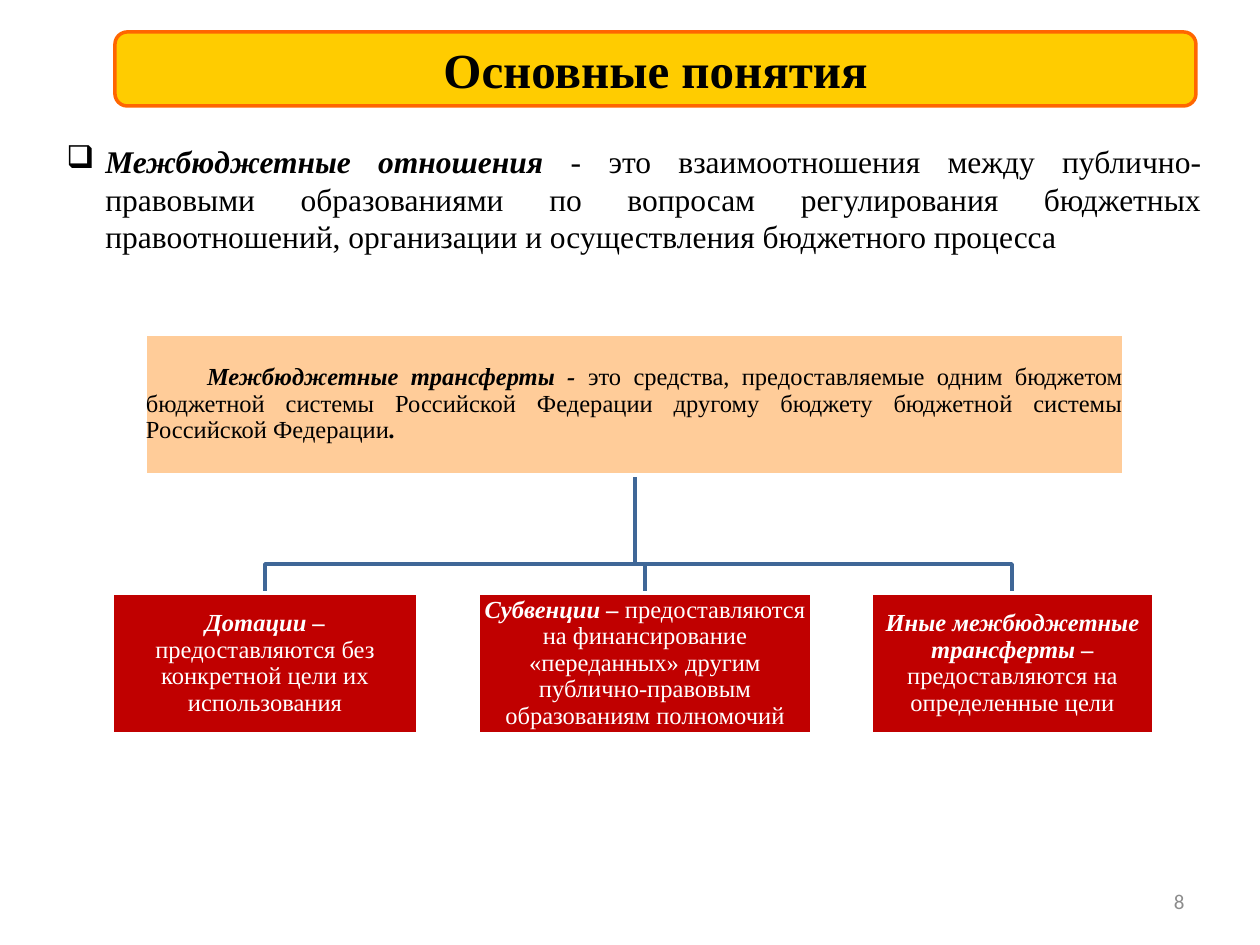
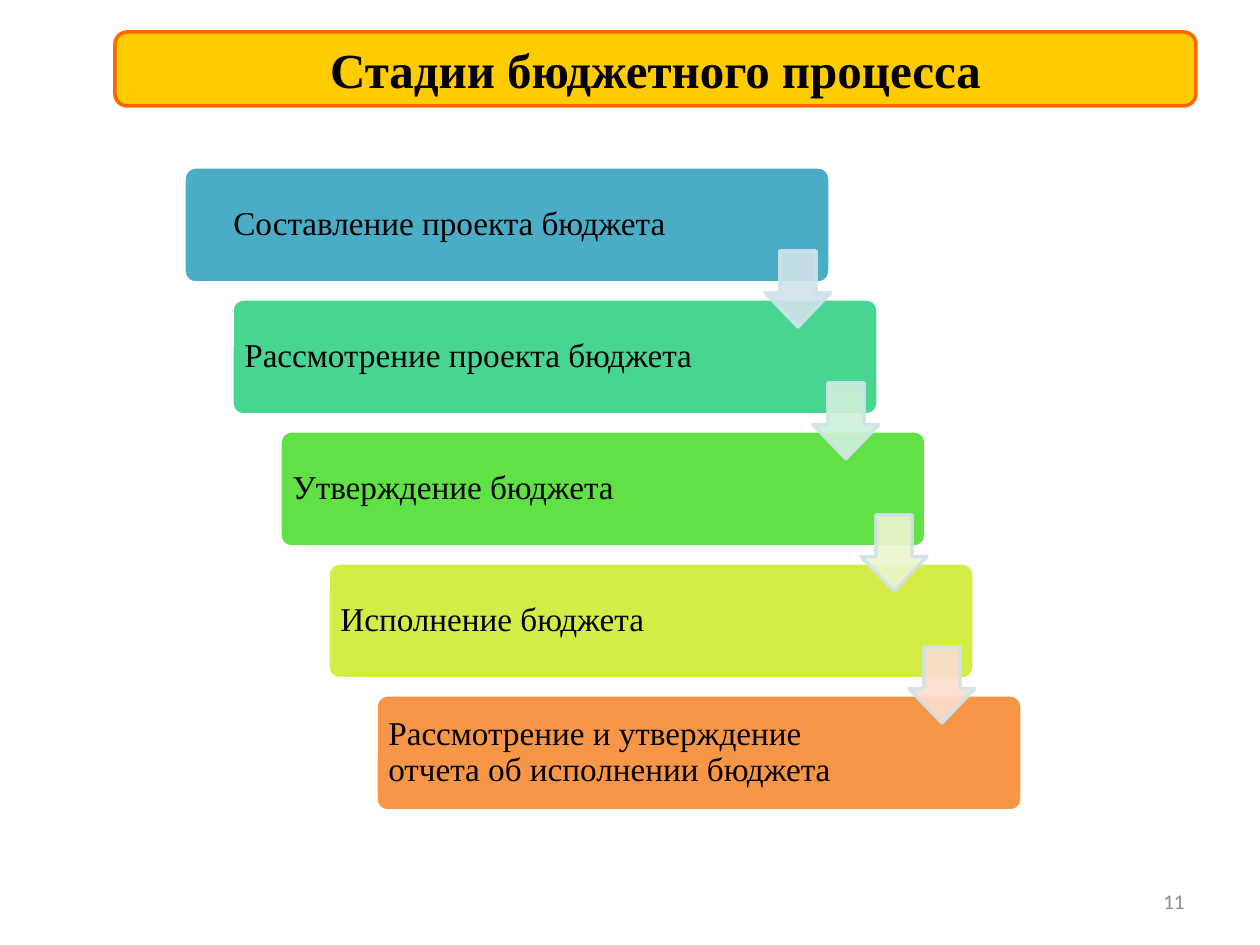
from lxml.etree import SubElement
from pptx import Presentation
from pptx.dml.color import RGBColor
from pptx.enum.shapes import MSO_SHAPE as SHAPE
from pptx.enum.text import MSO_ANCHOR as ANCHOR, PP_ALIGN as ALIGN
from pptx.oxml.ns import qn
from pptx.util import Inches, Pt

# Shared scale, fonts and colours
PX = Inches(1) / 126
SERIF, SANS = "Times New Roman", "Calibri"
BLACK, WHITE, GREY = "000000", "FFFFFF", "8C8C8C"
GOLD, ORANGE, PEACH, RED = "FFCC00", "FF6600", "FFCC99", "C00000"
TREE_BLUE, ARROW_EDGE = "3F6797", "D0E3EA"
TITLE_BOX = (115, 32, 1081, 74)
NUMBER_BOX = (903, 876, 294, 50)


def px(length):
    return round(length * PX)


def color(hex_string):
    return RGBColor.from_string(hex_string)


def box(slide, kind, area, fill, line):
    """Add a preset shape with a flat fill and a 2 pt outline."""
    shape = slide.shapes.add_shape(kind, *map(px, area))
    shape.shadow.inherit = False
    shape.fill.solid()
    shape.fill.fore_color.rgb = color(fill)
    shape.line.color.rgb = color(line)
    shape.line.width = Pt(2)
    return shape


def write(shape, runs, size, ink=BLACK, align=ALIGN.LEFT, font=SERIF,
          insets=None, spacing=None, margin=0, indent=0, bullet=None):
    """Fill a shape with one paragraph; runs are (text, emphasised) pairs."""
    frame = shape.text_frame
    frame.word_wrap = True
    frame.vertical_anchor = ANCHOR.MIDDLE
    if insets:
        (frame.margin_left, frame.margin_top,
         frame.margin_right, frame.margin_bottom) = map(px, insets)
    paragraph = frame.paragraphs[0]
    paragraph.alignment = align
    if spacing:
        paragraph.line_spacing = spacing
    properties = paragraph._p.get_or_add_pPr()
    properties.set("marL", str(px(margin)))
    properties.set("indent", str(px(indent)))
    if bullet:
        SubElement(properties, qn("a:buChar")).set("char", bullet)
    paragraph.font.name = font
    paragraph.font.size = Pt(size)
    paragraph.font.color.rgb = color(ink)
    for text, emphasised in runs:
        run = paragraph.add_run()
        run.text = text
        if emphasised:
            run.font.bold = run.font.italic = True
    return paragraph


def text_box(slide, area, runs, size, **style):
    write(slide.shapes.add_textbox(*map(px, area)), runs, size, **style)


def titled_slide(deck, heading, number):
    """Add a slide with the gold title band and its page number."""
    slide = deck.slides.add_slide(deck.slide_layouts[5])
    band = box(slide, SHAPE.ROUNDED_RECTANGLE, TITLE_BOX, GOLD, ORANGE)
    slide.shapes._spTree.insert(2, band._element)  # behind the title
    title = slide.shapes.title
    title.left, title.top, title.width, title.height = map(px, TITLE_BOX)
    write(title, [(heading, False)], 28, align=ALIGN.CENTER).font.bold = True
    text_box(slide, NUMBER_BOX, [(number, False)], 12, ink=GREY,
             align=ALIGN.RIGHT, font=SANS)
    return slide


def branch(slide, start, end, bend):
    """Draw a right-angled tree line that turns at the height bend."""
    builder = slide.shapes.build_freeform(*start, scale=PX)
    builder.add_line_segments([(start[0], bend), (end[0], bend), end], close=False)
    line = builder.convert_to_shape()
    line.shadow.inherit = False
    line.fill.background()
    line.line.color.rgb = color(TREE_BLUE)
    line.line.width = Pt(2)


def tree_node(slide, area, fill, runs, **style):
    node = box(slide, SHAPE.RECTANGLE, area, fill, WHITE)
    write(node, runs, 14, insets=(1, 1, 1, 1), spacing=0.9, **style)


def down_arrow(slide, left, top, fill):
    arrow = box(slide, SHAPE.DOWN_ARROW, (left, top, 66, 76), fill, ARROW_EDGE)
    arrow.adjustments[0], arrow.adjustments[1] = 0.55, 0.52
    for tint in arrow._element.spPr.iter(qn("a:srgbClr")):
        SubElement(tint, qn("a:alpha")).set("val", "90000")


def concepts_slide(deck):
    slide = titled_slide(deck, "Основные понятия", "8")
    text_box(slide, (54, 135, 1160, 127), [
        ("Межбюджетные отношения ", True),
        ("- это взаимоотношения между публично-правовыми образованиями по "
         "вопросам регулирования бюджетных правоотношений, организации и "
         "осуществления бюджетного процесса", False),
    ], 18, align=ALIGN.JUSTIFY, margin=39, indent=-39, bullet="❑")

    # Kinds of transfer: left, width, term, meaning
    kinds = [
        (112, 306, "Дотации – ",
         "предоставляются без конкретной цели их использования"),
        (478, 334, "Субвенции – ",
         "предоставляются на финансирование «переданных» другим "
         "публично-правовым образованиям полномочий"),
        (871, 283, "Иные межбюджетные трансферты – ",
         "предоставляются на определенные цели"),
    ]
    kinds_top, node_height = 593, 141
    for left, width, _, _ in kinds:
        branch(slide, (635, 475), (left + width / 2, kinds_top), 564)
    tree_node(slide, (145, 334, 979, node_height), PEACH, [
        ("Межбюджетные трансферты - ", True),
        ("это средства, предоставляемые одним бюджетом бюджетной системы "
         "Российской Федерации другому бюджету бюджетной системы "
         "Российской Федерации", False),
        (".", True),
    ], align=ALIGN.JUSTIFY, indent=61)
    for left, width, term, meaning in kinds:
        tree_node(slide, (left, kinds_top, width, node_height), RED,
                  [(term, True), (meaning, False)], ink=WHITE, align=ALIGN.CENTER)


def stages_slide(deck):
    slide = titled_slide(deck, "Стадии бюджетного процесса", "11")
    stages = [
        ("Составление проекта бюджета", "4BACC6"),
        ("Рассмотрение проекта бюджета", "48D491"),
        ("Утверждение бюджета", "60E146"),
        ("Исполнение бюджета", "D5EC46"),
        ("Рассмотрение и утверждение отчета об исполнении бюджета", "F79646"),
    ]
    corners = [(184 + 48 * step, 167 + 132 * step) for step in range(len(stages))]

    # Staircase of stages
    for (left, top), (name, fill) in zip(corners, stages):
        stage = box(slide, SHAPE.ROUNDED_RECTANGLE, (left, top, 646, 116), fill, WHITE)
        stage.adjustments[0] = 0.1
        first = name == stages[0][0]
        write(stage, [(name, False)], 19, insets=(9, 9, 124, 9), spacing=0.9,
              align=ALIGN.CENTER if first else ALIGN.LEFT)

    # Arrows from each stage to the next
    for (left, top), fill in zip(corners, ("D0E3EA", "CFF1D9", "EBF7CE", "FCDDCF")):
        down_arrow(slide, left + 581, top + 84, fill)


def main():
    deck = Presentation()
    deck.slide_width, deck.slide_height = Inches(10), Inches(7.5)
    concepts_slide(deck)
    stages_slide(deck)
    deck.save("out.pptx")


if __name__ == "__main__":
    main()
